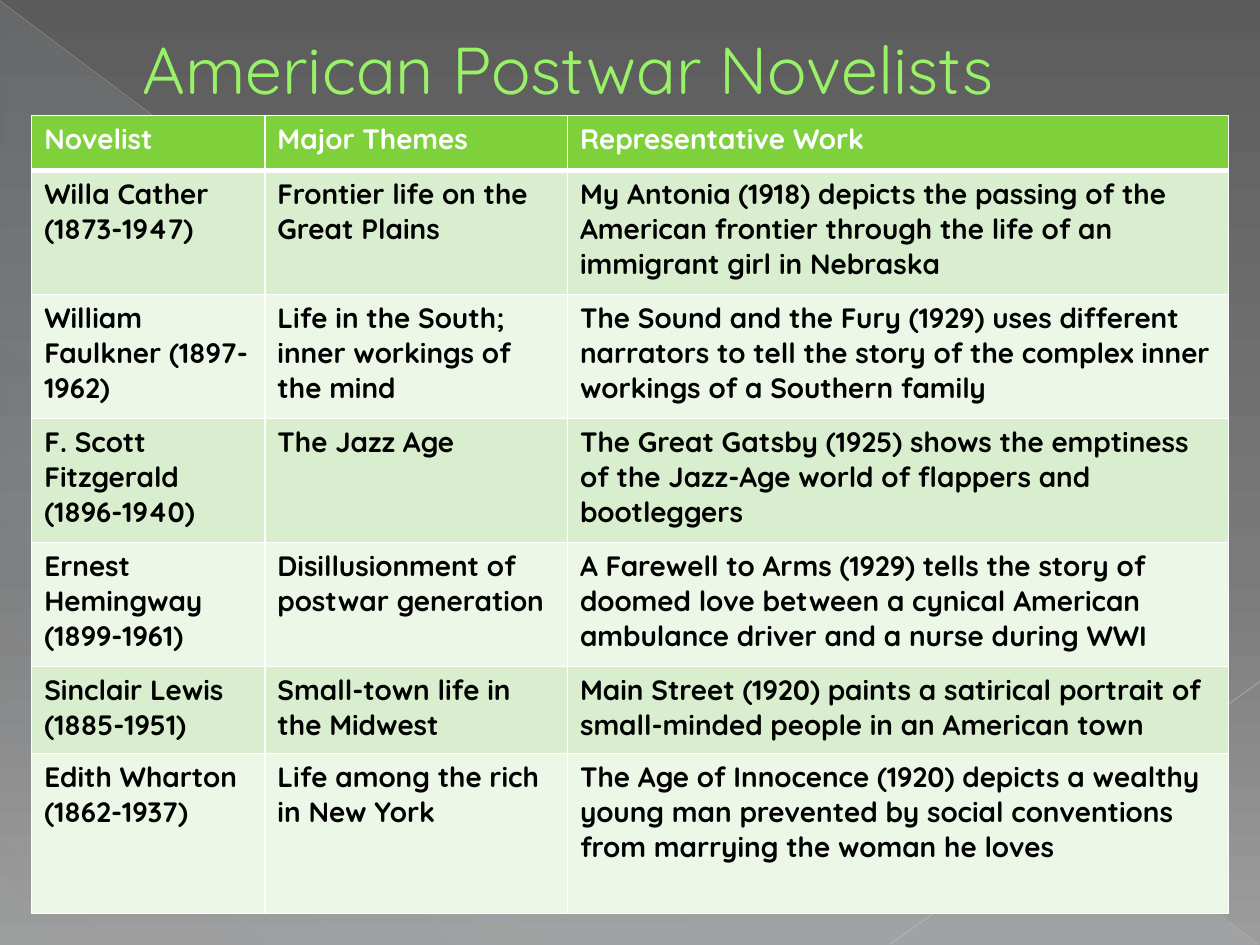
from pptx import Presentation, util as u
from pptx.dml.color import RGBColor
from pptx.enum import shapes, text
from pptx.oxml import parse_xml
from pptx.oxml.ns import nsdecls, qn

COLORS = {
    "title": "98F167", "outline": "589129", "header": "7FD13B",
    "band_dark": "D8EECE", "band_light": "ECF7E8", "white": "FFFFFF",
    "black": "000000", "glow": "D6ECFF", "diagonal": "C6C6C6",
    "corner": "CCCCCC", "bg_top": "5C5C5C", "bg_mid": "7A7A7A",
    "bg_bottom": "9C9C9C",
}
FONT = "Quicksand"
COLUMN_WIDTHS = (4.7, 6.1, 13.33)
ROW_HEIGHTS = (1.11, 2.5, 2.5, 2.5, 2.5, 1.75, 3.22)
NOVELISTS = (
    ("Novelist", "Major Themes", "Representative Work"),
    ("Willa Cather (1873-1947)", "Frontier life on the Great Plains",
     "My Antonia (1918) depicts the passing of the American frontier "
     "through the life of an immigrant girl in Nebraska"),
    ("William Faulkner (1897-1962)",
     "Life in the South; inner workings of the mind",
     "The Sound and the Fury (1929) uses different narrators to tell the "
     "story of the complex inner workings of a Southern family"),
    ("F. Scott Fitzgerald (1896-1940)", "The Jazz Age",
     "The Great Gatsby (1925) shows the emptiness of the Jazz-Age world "
     "of flappers and bootleggers"),
    ("Ernest Hemingway (1899-1961)", "Disillusionment of postwar generation",
     "A Farewell to Arms (1929) tells the story of doomed love between a "
     "cynical American ambulance driver and a nurse during WWI"),
    ("Sinclair Lewis (1885-1951)", "Small-town life in the Midwest",
     "Main Street (1920) paints a satirical portrait of small-minded "
     "people in an American town"),
    ("Edith Wharton (1862-1937)", "Life among the rich in New York",
     "The Age of Innocence (1920) depicts a wealthy young man prevented by "
     "social conventions from marrying the woman he loves"),
)


def rgb(name):
    return RGBColor.from_string(COLORS[name])


def color_xml(name, alpha=100):
    return (f'<a:srgbClr val="{COLORS[name]}">'
            f'<a:alpha val="{alpha * 1000}"/></a:srgbClr>')


def line_xml(tag, name, points):
    return parse_xml(
        f'<a:{tag} {nsdecls("a")} w="{u.Pt(points)}"><a:solidFill>'
        f'{color_xml(name)}</a:solidFill></a:{tag}>')


class SlideBuilder:
    """Holds the deck style and the current slide."""

    def __init__(self, prs):
        self.s = prs.slides.add_slide(prs.slide_layouts[5])

    def gradient(self, fill, element, angle, stops):
        fill.gradient()
        fill.gradient_angle = 360 - angle
        gs_list = next(element.iter(qn("a:gsLst")))
        for gs in list(gs_list):
            gs_list.remove(gs)
        for pos, name, alpha in stops:
            gs_list.append(parse_xml(
                f'<a:gs {nsdecls("a")} pos="{pos * 1000}">'
                f'{color_xml(name, alpha)}</a:gs>'))

    def background(self, angle, stops):
        self.gradient(self.s.background.fill, self.s.element, angle, stops)

    def triangle(self, x, y, w, h, angle, stops):
        sp = self.s.shapes.add_shape(
            shapes.MSO_SHAPE.RIGHT_TRIANGLE,
            u.Cm(x), u.Cm(y), u.Cm(w), u.Cm(h))
        sp.shadow.inherit = False
        sp.line.fill.background()
        self.gradient(sp.fill, sp.element, angle, stops)

    def line(self, x1, y1, x2, y2, name, points, alpha):
        cx = self.s.shapes.add_connector(
            shapes.MSO_CONNECTOR.STRAIGHT,
            u.Cm(x1), u.Cm(y1), u.Cm(x2), u.Cm(y2))
        cx.line.width = u.Pt(points)
        cx.line.color.rgb = rgb(name)
        sp_pr = cx.element.spPr
        clr = next(sp_pr.iter(qn("a:srgbClr")))
        clr.append(parse_xml(
            f'<a:alpha {nsdecls("a")} val="{alpha * 1000}"/>'))
        sp_pr.append(parse_xml(f'<a:effectLst {nsdecls("a")}/>'))

    def title(self, x, y, w, h, words, size, indent):
        sp = self.s.shapes.title
        sp.element.getparent().append(sp.element)
        sp.left, sp.top, sp.width, sp.height = map(u.Cm, (x, y, w, h))
        tf = sp.text_frame
        tf.text = words
        tf.word_wrap = True
        tf.auto_size = text.MSO_AUTO_SIZE.NONE
        tf.vertical_anchor = text.MSO_ANCHOR.MIDDLE
        p = tf.paragraphs[0]
        p.alignment = text.PP_ALIGN.LEFT
        self.style(p, size, "title", False)
        p_pr = p._p.get_or_add_pPr()
        p_pr.set("marL", str(u.Cm(indent)))
        p_pr.set("indent", "0")
        r_pr = p.runs[0]._r.get_or_add_rPr()
        r_pr.insert(0, line_xml("ln", "outline", 0.5))

    def style(self, p, size, name, bold):
        p.font.name = FONT
        p.font.size = u.Pt(size)
        p.font.bold = bold
        p.font.color.rgb = rgb(name)

    def cell(self, cell, words, fill, color, top, bottom):
        cell.text = words
        self.style(cell.text_frame.paragraphs[0], 16, color, True)
        cell.fill.solid()
        cell.fill.fore_color.rgb = rgb(fill)
        tc_pr = cell._tc.get_or_add_tcPr()
        borders = (("lnL", 1), ("lnR", 1), ("lnT", top), ("lnB", bottom))
        for i, (tag, points) in enumerate(borders):
            tc_pr.insert(i, line_xml(tag, "white", points))

    def table(self, x, y, widths, heights, rows):
        table = self.s.shapes.add_table(
            len(rows), len(widths), u.Cm(x), u.Cm(y),
            u.Cm(sum(widths)), u.Cm(sum(heights))).table
        for column, width in zip(table.columns, widths):
            column.width = u.Cm(width)
        for i, (row, height) in enumerate(zip(rows, heights)):
            table.rows[i].height = u.Cm(height)
            band = "band_dark" if i % 2 else "band_light"
            fill, color = ("header", "white") if i == 0 else (band, "black")
            for j, words in enumerate(row):
                self.cell(table.cell(i, j), words, fill, color,
                          top=3 if i == 1 else 1, bottom=3 if i == 0 else 1)


def main():
    prs = Presentation()
    prs.slide_width, prs.slide_height = u.Cm(25.4), u.Cm(19.05)
    b = SlideBuilder(prs)
    b.background(90, ((0, "bg_top", 100), (60, "bg_mid", 100),
                      (100, "bg_bottom", 100)))
    b.triangle(0.02, 0.04, 25.36, 19, 133,
               ((0, "glow", 10), (70, "glow", 8), (100, "glow", 1)))
    b.line(0, 0.02, 25.38, 19.03, "diagonal", 0.39, 35)
    b.line(25.4, 13.74, 17.95, 19.03, "corner", 0.47, 45)
    b.title(1.27, 0.64, 22.86, 1.48, "American Postwar Novelists", 37.8, 1.35)
    b.table(0.64, 2.33, COLUMN_WIDTHS, ROW_HEIGHTS, NOVELISTS)
    prs.save("out.pptx")


if __name__ == "__main__":
    main()
